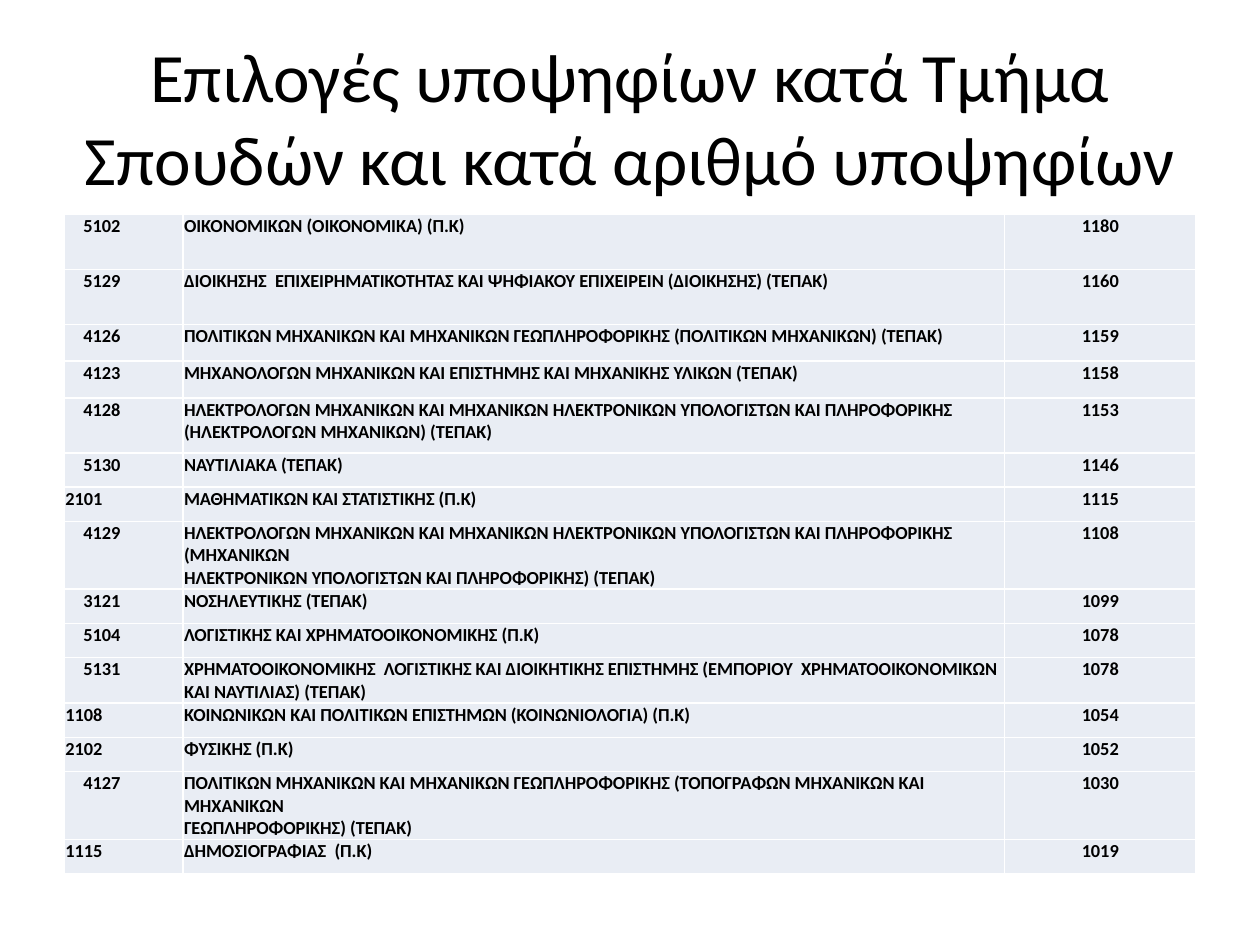
import pptx
import pptx.dml.color
import pptx.enum.text
import pptx.oxml
import pptx.oxml.ns
import pptx.util

Cm, Pt = pptx.util.Cm, pptx.util.Pt
Align = pptx.enum.text.PP_ALIGN
Anchor = pptx.enum.text.MSO_ANCHOR

TITLE = "Επιλογές υποψηφίων κατά Τμήμα\nΣπουδών και κατά αριθμό υποψηφίων"
COLUMN_WIDTHS = [2.39, 16.56, 3.86]
TALL, MEDIUM, SHORT = 1.11, 0.74, 0.69

# Row height, department code, department, number of candidates
DEPARTMENTS = [
    (TALL, "5102", "ΟΙΚΟΝΟΜΙΚΩΝ (ΟΙΚΟΝΟΜΙΚΑ) (Π.Κ)", "1180"),
    (TALL, "5129", "ΔΙΟΙΚΗΣΗΣ  ΕΠΙΧΕΙΡΗΜΑΤΙΚΟΤΗΤΑΣ ΚΑΙ ΨΗΦΙΑΚΟΥ ΕΠΙΧΕΙΡΕΙΝ "
     "(ΔΙΟΙΚΗΣΗΣ) (ΤΕΠΑΚ)", "1160"),
    (MEDIUM, "4126", "ΠΟΛΙΤΙΚΩΝ ΜΗΧΑΝΙΚΩΝ ΚΑΙ ΜΗΧΑΝΙΚΩΝ ΓΕΩΠΛΗΡΟΦΟΡΙΚΗΣ "
     "(ΠΟΛΙΤΙΚΩΝ ΜΗΧΑΝΙΚΩΝ) (ΤΕΠΑΚ)", "1159"),
    (MEDIUM, "4123", "ΜΗΧΑΝΟΛΟΓΩΝ ΜΗΧΑΝΙΚΩΝ ΚΑΙ ΕΠΙΣΤΗΜΗΣ ΚΑΙ ΜΗΧΑΝΙΚΗΣ ΥΛΙΚΩΝ "
     "(ΤΕΠΑΚ)", "1158"),
    (TALL, "4128", "ΗΛΕΚΤΡΟΛΟΓΩΝ ΜΗΧΑΝΙΚΩΝ ΚΑΙ ΜΗΧΑΝΙΚΩΝ ΗΛΕΚΤΡΟΝΙΚΩΝ ΥΠΟΛΟΓΙΣΤΩΝ "
     "ΚΑΙ ΠΛΗΡΟΦΟΡΙΚΗΣ (ΗΛΕΚΤΡΟΛΟΓΩΝ ΜΗΧΑΝΙΚΩΝ) (ΤΕΠΑΚ)", "1153"),
    (SHORT, "5130", "ΝΑΥΤΙΛΙΑΚΑ (ΤΕΠΑΚ)", "1146"),
    (SHORT, "2101", "ΜΑΘΗΜΑΤΙΚΩΝ ΚΑΙ ΣΤΑΤΙΣΤΙΚΗΣ (Π.Κ)", "1115"),
    (TALL, "4129", "ΗΛΕΚΤΡΟΛΟΓΩΝ ΜΗΧΑΝΙΚΩΝ ΚΑΙ ΜΗΧΑΝΙΚΩΝ ΗΛΕΚΤΡΟΝΙΚΩΝ ΥΠΟΛΟΓΙΣΤΩΝ "
     "ΚΑΙ ΠΛΗΡΟΦΟΡΙΚΗΣ (ΜΗΧΑΝΙΚΩΝ\n"
     "ΗΛΕΚΤΡΟΝΙΚΩΝ ΥΠΟΛΟΓΙΣΤΩΝ ΚΑΙ ΠΛΗΡΟΦΟΡΙΚΗΣ) (ΤΕΠΑΚ)", "1108"),
    (SHORT, "3121", "ΝΟΣΗΛΕΥΤΙΚΗΣ (ΤΕΠΑΚ)", "1099"),
    (SHORT, "5104", "ΛΟΓΙΣΤΙΚΗΣ ΚΑΙ ΧΡΗΜΑΤΟΟΙΚΟΝΟΜΙΚΗΣ (Π.Κ)", "1078"),
    (MEDIUM, "5131", "ΧΡΗΜΑΤΟΟΙΚΟΝΟΜΙΚΗΣ  ΛΟΓΙΣΤΙΚΗΣ ΚΑΙ ΔΙΟΙΚΗΤΙΚΗΣ ΕΠΙΣΤΗΜΗΣ "
     "(ΕΜΠΟΡΙΟΥ  ΧΡΗΜΑΤΟΟΙΚΟΝΟΜΙΚΩΝ ΚΑΙ ΝΑΥΤΙΛΙΑΣ) (ΤΕΠΑΚ)", "1078"),
    (SHORT, "1108", "ΚΟΙΝΩΝΙΚΩΝ ΚΑΙ ΠΟΛΙΤΙΚΩΝ ΕΠΙΣΤΗΜΩΝ (ΚΟΙΝΩΝΙΟΛΟΓΙΑ) (Π.Κ)", "1054"),
    (SHORT, "2102", "ΦΥΣΙΚΗΣ (Π.Κ)", "1052"),
    (TALL, "4127", "ΠΟΛΙΤΙΚΩΝ ΜΗΧΑΝΙΚΩΝ ΚΑΙ ΜΗΧΑΝΙΚΩΝ ΓΕΩΠΛΗΡΟΦΟΡΙΚΗΣ "
     "(ΤΟΠΟΓΡΑΦΩΝ ΜΗΧΑΝΙΚΩΝ ΚΑΙ ΜΗΧΑΝΙΚΩΝ\nΓΕΩΠΛΗΡΟΦΟΡΙΚΗΣ) (ΤΕΠΑΚ)", "1030"),
    (SHORT, "1115", "ΔΗΜΟΣΙΟΓΡΑΦΙΑΣ  (Π.Κ)", "1019"),
]


def color(value):
    return pptx.dml.color.RGBColor.from_string(value)


def assign(target, values):
    """Set each attribute named in values on target."""
    for name, value in values.items():
        setattr(target, name, value)


class SlideBuilder:
    font = "Calibri"
    ink = "000000"
    cell_fill = "E9EDF4"
    border = "FFFFFF"

    def __init__(self, page):
        self.page = page

    def fill_text(self, frame, text, align, **font_values):
        """Fill one paragraph, turning newlines into line breaks."""
        para = frame.paragraphs[0]
        para.alignment = align
        for number, line in enumerate(text.split("\n")):
            if number:
                para.add_line_break()
            span = para.add_run()
            span.text = line
            assign(span.font, {"name": self.font, **font_values})
            span.font.color.rgb = color(self.ink)

    def title(self, text, left, top, width, height):
        box = self.page.shapes.title
        assign(box, {"left": Cm(left), "top": Cm(top),
                     "width": Cm(width), "height": Cm(height)})
        assign(box.text_frame, {"word_wrap": True, "vertical_anchor": Anchor.MIDDLE,
                                "auto_size": pptx.enum.text.MSO_AUTO_SIZE.NONE})
        self.fill_text(box.text_frame, text, Align.CENTER, size=Pt(39.6))

    def cell(self, cell, text, align, indent):
        assign(cell, {"margin_left": Cm(indent), "margin_right": Cm(0.02),
                      "margin_top": Cm(0.02), "margin_bottom": 0,
                      "vertical_anchor": Anchor.TOP})
        cell.fill.solid()
        cell.fill.fore_color.rgb = color(self.cell_fill)
        self.fill_text(cell.text_frame, text, align, size=Pt(10.5), bold=True)
        properties = cell._tc.get_or_add_tcPr()
        for position, side in enumerate(("lnL", "lnR", "lnT", "lnB")):
            properties.insert(position, pptx.oxml.parse_xml(
                f'<a:{side} {pptx.oxml.ns.nsdecls("a")} w="{Pt(1)}"><a:solidFill>'
                f'<a:srgbClr val="{self.border}"/></a:solidFill></a:{side}>'))

    def department_table(self, left, top, departments):
        heights = [department[0] for department in departments]
        table = self.page.shapes.add_table(
            len(departments), len(COLUMN_WIDTHS), Cm(left), Cm(top),
            Cm(sum(COLUMN_WIDTHS)), Cm(sum(heights))).table
        assign(table, {"first_row": False, "horz_banding": False})
        for column, width in zip(table.columns, COLUMN_WIDTHS):
            column.width = Cm(width)
        for row, (height, code, name, candidates) in zip(table.rows, departments):
            row.height = Cm(height)
            code_indent = 0.38 if code >= "3000" else 0.02
            self.cell(row.cells[0], code, Align.LEFT, code_indent)
            self.cell(row.cells[1], name, Align.LEFT, 0.02)
            self.cell(row.cells[2], candidates, Align.CENTER, 0.02)


def main():
    deck = pptx.Presentation()
    assign(deck, {"slide_width": Cm(25.4), "slide_height": Cm(19.05)})
    builder = SlideBuilder(deck.slides.add_slide(deck.slide_layouts[5]))
    builder.title(TITLE, 1.27, 0.76, 22.86, 3.18)
    builder.department_table(1.3, 4.32, DEPARTMENTS)
    deck.save("out.pptx")


if __name__ == "__main__":
    main()
